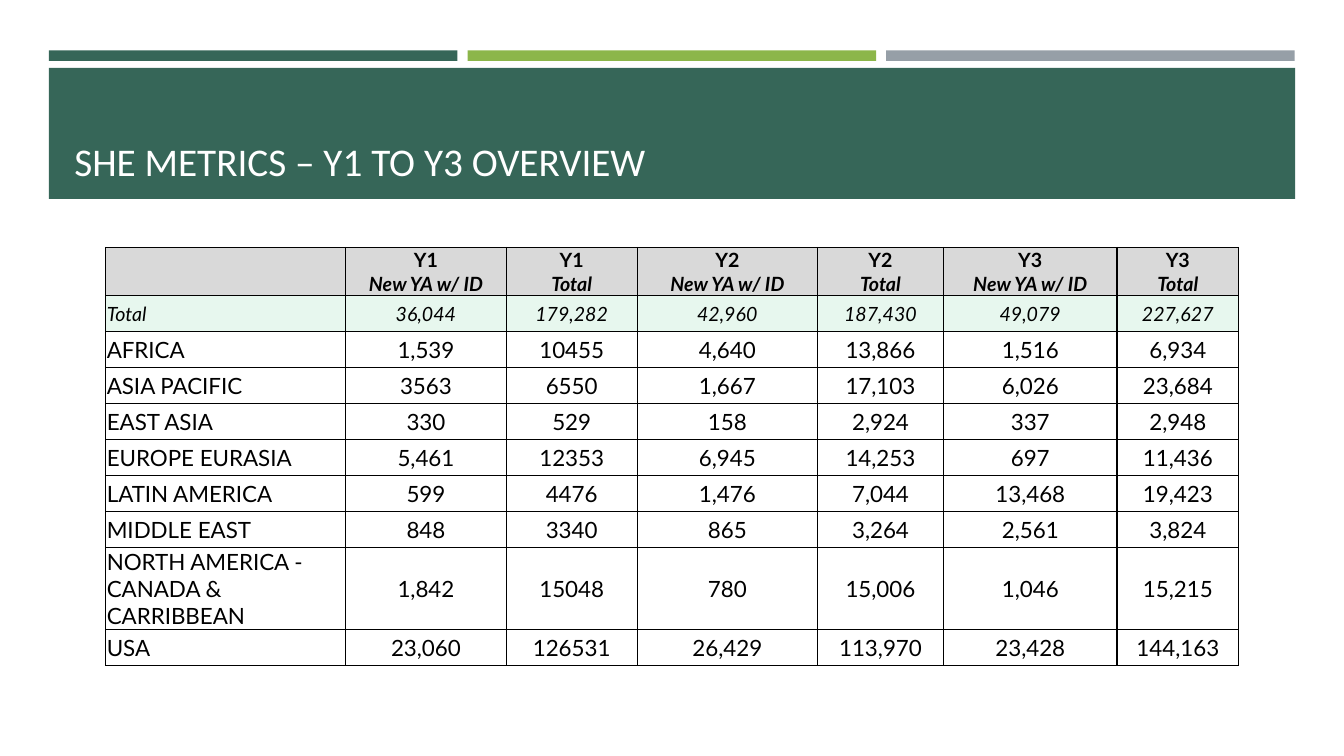
"""Build the SHE metrics overview slide with its regional table."""
from lxml import etree
from pptx import Presentation
from pptx import util as u
from pptx.dml.color import RGBColor
from pptx.enum import shapes, text
from pptx.oxml import ns

Pt = u.Pt
COLORS = {
    "green": "366658",
    "lime": "8CB64A",
    "gray": "969FA7",
    "header": "D9D9D9",
    "total": "E7F7EE",
    "black": "000000",
    "white": "FFFFFF",
}
COLUMN_WIDTHS = [171.4, 114.6, 93.6, 128.8, 90, 124, 86.8]
HEADER_HEIGHT, ROW_HEIGHT, TALL_HEIGHT = 34.3, 25.74, 57.5
METRICS = [
    ["Total", "36,044", "179,282", "42,960", "187,430", "49,079", "227,627"],
    ["AFRICA", "1,539", "10455", "4,640", "13,866", "1,516", "6,934"],
    ["ASIA PACIFIC", "3563", "6550", "1,667", "17,103", "6,026", "23,684"],
    ["EAST ASIA", "330", "529", "158", "2,924", "337", "2,948"],
    ["EUROPE EURASIA", "5,461", "12353", "6,945", "14,253", "697", "11,436"],
    ["LATIN AMERICA", "599", "4476", "1,476", "7,044", "13,468", "19,423"],
    ["MIDDLE EAST", "848", "3340", "865", "3,264", "2,561", "3,824"],
    ["NORTH AMERICA - CANADA & CARRIBBEAN",
     "1,842", "15048", "780", "15,006", "1,046", "15,215"],
    ["USA", "23,060", "126531", "26,429", "113,970", "23,428", "144,163"],
]


def rgb(name):
    """Return the named colour."""
    return RGBColor.from_string(COLORS[name])


def add_bar(slide, left, top, width, height, color):
    """Add a plain filled rectangle."""
    bar = slide.shapes.add_shape(
        shapes.MSO_SHAPE.RECTANGLE, Pt(left), Pt(top), Pt(width), Pt(height))
    bar.shadow.inherit = False
    bar.fill.solid()
    bar.fill.fore_color.rgb = rgb(color)
    bar.line.fill.background()


def format_font(font, face, size, color, bold=False, italic=False):
    """Set the face, size, colour and emphasis of a font."""
    font.name, font.size = face, Pt(size)
    font.bold, font.italic = bold, italic
    font.color.rgb = rgb(color)


def add_title(slide, wording):
    """Add the slide title at the bottom of the banner."""
    title = slide.shapes.add_textbox(Pt(46), Pt(55.4), Pt(868.3), Pt(80))
    frame = title.text_frame
    frame.word_wrap = True
    frame.vertical_anchor = text.MSO_ANCHOR.BOTTOM
    frame.text = wording
    format_font(frame.paragraphs[0].runs[0].font, "Calibri", 28, "white")


def add_borders(cell):
    """Draw a thin black border on all four sides of a cell."""
    properties = cell._tc.get_or_add_tcPr()
    for side in ("a:lnL", "a:lnR", "a:lnT", "a:lnB"):
        border = etree.SubElement(properties, ns.qn(side), w=str(Pt(1)))
        fill = etree.SubElement(border, ns.qn("a:solidFill"))
        etree.SubElement(fill, ns.qn("a:srgbClr"), val=COLORS["black"])


def fill_cell(cell, wording, row, column):
    """Write and style one table cell according to its row and column."""
    add_borders(cell)
    if row < 2:
        cell.fill.solid()
        cell.fill.fore_color.rgb = rgb("total" if row else "header")
    else:
        cell.fill.background()
    cell.vertical_anchor = text.MSO_ANCHOR.MIDDLE
    cell.margin_left = cell.margin_right = cell.margin_top = Pt(0.7)
    cell.margin_bottom = Pt(0)
    cell.text_frame.text = wording
    for line, paragraph in enumerate(cell.text_frame.paragraphs):
        paragraph.alignment = text.PP_ALIGN.CENTER if column else text.PP_ALIGN.LEFT
        for run in paragraph.runs:
            format_font(run.font, "Lato", 14 if row < 2 else 16, "black",
                        bold=row == 0, italic=row == 1 or line == 1)


def add_metrics_table(slide):
    """Add the table of yearly metrics by region."""
    header = [""] + [f"{year}\n{measure}" for year in ("Y1", "Y2", "Y3")
                     for measure in ("New YA w/ ID", "Total")]
    rows = [header] + METRICS
    heights = [HEADER_HEIGHT] + [
        TALL_HEIGHT if region.startswith("NORTH") else ROW_HEIGHT
        for region, *_ in METRICS]
    table = slide.shapes.add_table(
        len(rows), len(header), Pt(75.6), Pt(176.8),
        Pt(sum(COLUMN_WIDTHS)), Pt(sum(heights))).table
    table.first_row = table.horz_banding = False
    for column, width in zip(table.columns, COLUMN_WIDTHS):
        column.width = Pt(width)
    for row, (height, wordings) in enumerate(zip(heights, rows)):
        table.rows[row].height = Pt(height)
        for column, wording in enumerate(wordings):
            fill_cell(table.cell(row, column), wording, row, column)


def main():
    """Build and save the presentation."""
    deck = Presentation()
    deck.slide_width, deck.slide_height = Pt(960), Pt(540)
    slide = deck.slides.add_slide(deck.slide_layouts[6])
    for index, color in enumerate(("green", "lime", "gray")):
        add_bar(slide, 35 + 299 * index, 36, 291.8, 7.5, color)
    add_bar(slide, 34.9, 48.5, 890.3, 93.6, "green")
    add_title(slide, "SHE METRICS – Y1 TO Y3 OVERVIEW")
    add_metrics_table(slide)
    deck.save("out.pptx")


if __name__ == "__main__":
    main()
